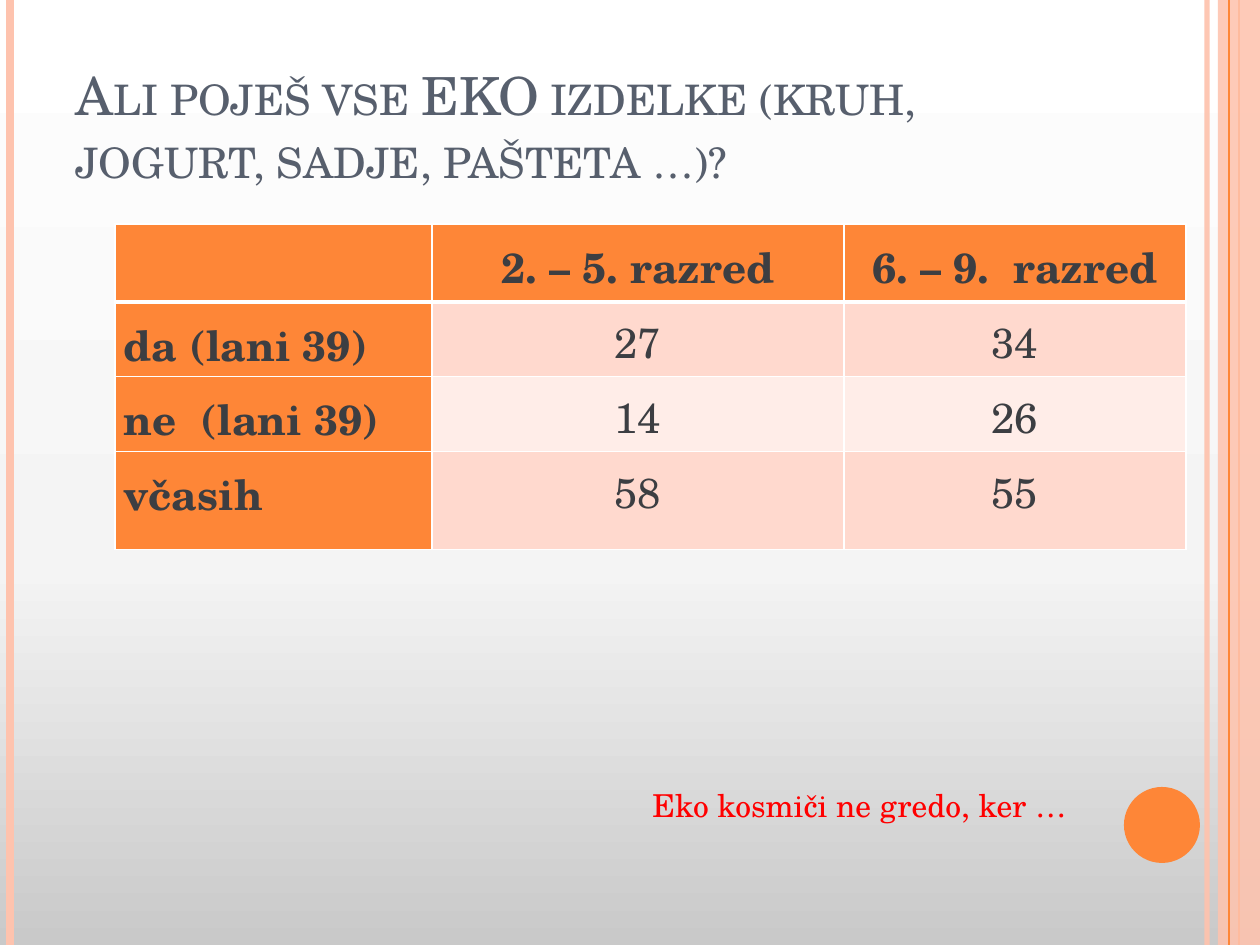
import copy

import pptx
import pptx.dml.color
import pptx.enum.shapes
import pptx.enum.text
import pptx.oxml
import pptx.oxml.ns
import pptx.util
from lxml import etree

THEME = {
    "font": "TeX Gyre Schola",
    "orange": "FE8637", "peach": "FEC3AE", "white": "FFFFFF",
    "band_dark": "FFD9CE", "band_light": "FFEDE8",
    "title": "575F6D", "text": "3C3E42", "note": "FF0000",
    "background": [(0, "C9C9C9"), (0.4, "F4F4F4"), (1, "FFFFFF")],
    "title_size": 30, "table_size": 24, "note_size": 18,
}
EMU_PER_PX = 914400 / 126
qn = pptx.oxml.ns.qn
rgb = pptx.dml.color.RGBColor.from_string


def px(*lengths):
    return [pptx.util.Emu(round(length * EMU_PER_PX)) for length in lengths]


def style(paragraph, size, color, bold=False):
    paragraph.font.name = THEME["font"]
    paragraph.font.size = pptx.util.Pt(size)
    paragraph.font.color.rgb = rgb(color)
    paragraph.font.bold = bold


deck = pptx.Presentation()
deck.slide_width, deck.slide_height = px(1260, 945)
slide = deck.slides.add_slide(deck.slide_layouts[5])

# Background gradient, grey at the bottom
background = slide.background.fill
background.gradient()
background.gradient_angle = 90
stop_list = slide.element.find(".//" + qn("a:gsLst"))
stop_list.append(copy.deepcopy(stop_list[0]))
for stop, (position, color) in zip(background.gradient_stops, THEME["background"]):
    stop.position = position
    stop.color.rgb = rgb(color)

# Side stripes: x, width in points, colour, opacity; None marks the broad band
stripes = [
    (1207, 3, "peach", 93), (10, 4.5, "peach", 100), (1239, 1.5, "orange", 100),
    (1218, None, "peach", 87), (1229, 0.75, "orange", 100),
]
for x, weight, color, opacity in stripes:
    if weight is None:
        stripe = slide.shapes.add_shape(
            pptx.enum.shapes.MSO_SHAPE.RECTANGLE, *px(x, 0, 1260 - x, 945))
        stripe.shadow.inherit = False
        stripe.fill.solid()
        stripe.fill.fore_color.rgb = rgb(THEME[color])
        stripe.line.fill.background()
    else:
        stripe = slide.shapes.add_connector(
            pptx.enum.shapes.MSO_CONNECTOR.STRAIGHT, *px(x, 0, x, 945))
        stripe.line.width = pptx.util.Pt(weight)
        stripe.line.color.rgb = rgb(THEME[color])
        etree.SubElement(stripe.element.spPr, qn("a:effectLst"))
    if opacity < 100:
        tint = stripe.element.spPr.find(".//" + qn("a:srgbClr"))
        etree.SubElement(tint, qn("a:alpha"), val=str(opacity * 1000))

# Orange dot
dot = slide.shapes.add_shape(pptx.enum.shapes.MSO_SHAPE.OVAL, *px(1124, 787, 76, 76))
dot.shadow.inherit = False
dot.fill.solid()
dot.fill.fore_color.rgb = rgb(THEME["orange"])
dot.line.fill.background()

# Title in small capitals
question = slide.shapes.title
question.left, question.top, question.width, question.height = px(63, 38, 1029, 157)
question.text_frame.text = "Ali poješ vse EKO izdelke (kruh, jogurt, sadje, pašteta …)?"
question.text_frame.vertical_anchor = pptx.enum.text.MSO_ANCHOR.BOTTOM
question.text_frame.auto_size = pptx.enum.text.MSO_AUTO_SIZE.NONE
question_line = question.text_frame.paragraphs[0]
question_line.alignment = pptx.enum.text.PP_ALIGN.LEFT
style(question_line, THEME["title_size"], THEME["title"])
question.element.find(".//" + qn("a:defRPr")).set("cap", "small")

# Table of answers by school level
answers = [
    ["", "2. – 5. razred", "6. – 9.  razred"],
    ["da (lani 39)", "27", "34"],
    ["ne  (lani 39)", "14", "26"],
    ["včasih", "58", "55"],
]
column_widths = px(317, 412, 342)
row_heights = px(78, 60, 60, 98)
survey = slide.shapes.add_table(
    4, 3, *px(115, 224), sum(column_widths), sum(row_heights)).table
survey.first_row = survey.horz_banding = False
for column, width in zip(survey.columns, column_widths):
    column.width = width
for row, height in zip(survey.rows, row_heights):
    row.height = height

for r, row_answers in enumerate(answers):
    for c, answer in enumerate(row_answers):
        cell = survey.cell(r, c)
        is_heading = r == 0 or c == 0
        cell.margin_left, cell.margin_right = px(9, 9)
        cell.margin_top = cell.margin_bottom = 0

        # White borders, thicker under the heading row
        properties = cell._tc.get_or_add_tcPr()
        for side in "LRTB":
            thick = (r, side) in [(0, "B"), (1, "T")]
            border = etree.SubElement(
                properties, qn("a:ln" + side), w=str(pptx.util.Pt(3 if thick else 1)))
            paint = etree.SubElement(border, qn("a:solidFill"))
            etree.SubElement(paint, qn("a:srgbClr"), val=THEME["white"])

        cell.fill.solid()
        band = "band_dark" if r % 2 else "band_light"
        cell.fill.fore_color.rgb = rgb(THEME["orange" if is_heading else band])

        cell.text = answer
        answer_line = cell.text_frame.paragraphs[0]
        answer_line.line_spacing = 1.15
        answer_line.alignment = (
            pptx.enum.text.PP_ALIGN.CENTER if c else pptx.enum.text.PP_ALIGN.LEFT)
        style(answer_line, THEME["table_size"], THEME["text"], bold=is_heading)

# Closing remark
remark = slide.shapes.add_textbox(*px(640, 780, 466, 50)).text_frame
remark.word_wrap = True
remark.auto_size = pptx.enum.text.MSO_AUTO_SIZE.SHAPE_TO_FIT_TEXT
remark.text = "Eko kosmiči ne gredo, ker …"
style(remark.paragraphs[0], THEME["note_size"], THEME["note"])

deck.save("out.pptx")
